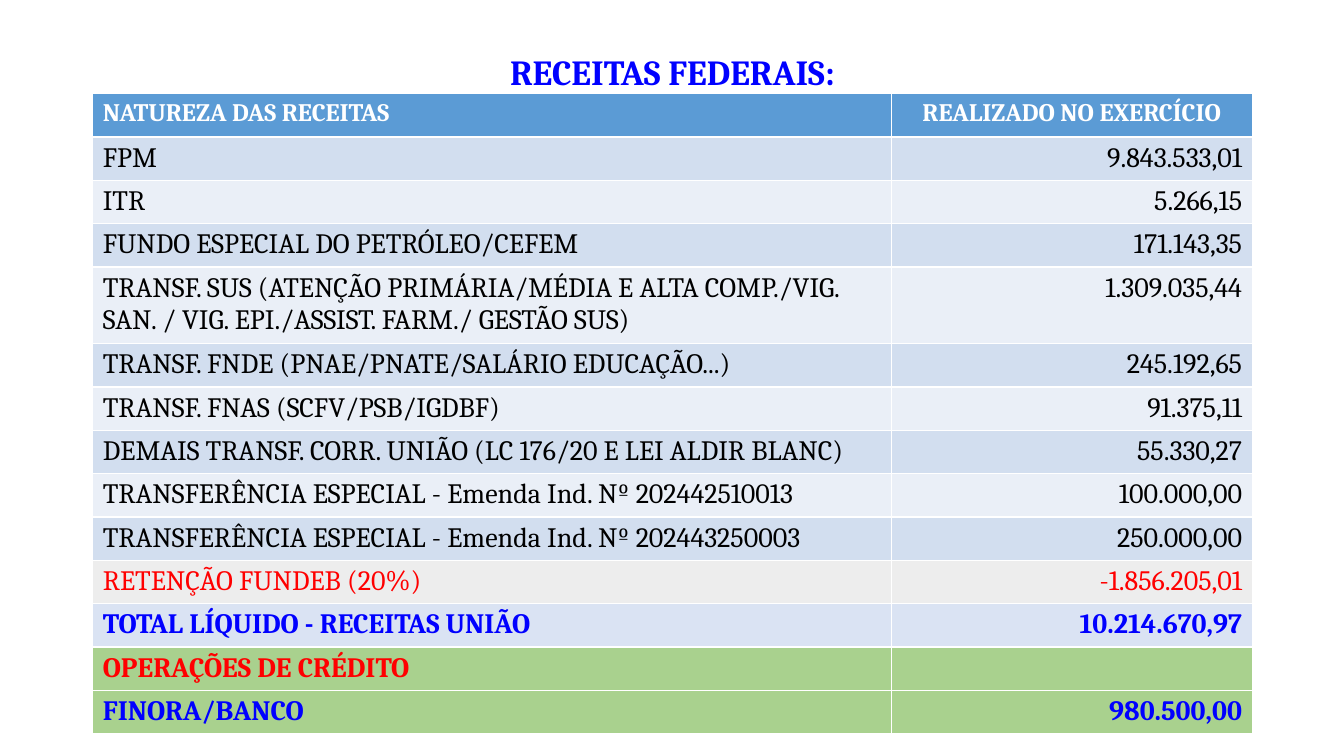
from pptx import Presentation
from pptx.dml.color import RGBColor
from pptx.enum.text import MSO_ANCHOR as Anchor, MSO_AUTO_SIZE as AutoSize, PP_ALIGN as Align
from pptx.util import Inches, Pt

FONT = "Cambria"
WHITE = RGBColor(0xFF, 0xFF, 0xFF)
BLACK = RGBColor(0x00, 0x00, 0x00)
BLUE = RGBColor(0x00, 0x00, 0xFF)
RED = RGBColor(0xFF, 0x00, 0x00)
HEADER_BLUE = RGBColor(0x5B, 0x9B, 0xD5)
BANDS = (RGBColor(0xD2, 0xDE, 0xEF), RGBColor(0xEA, 0xEF, 0xF7))
PALE_GREY = RGBColor(0xED, 0xED, 0xED)
PALE_BLUE = RGBColor(0xDA, 0xE3, 0xF3)
GREEN = RGBColor(0xA9, 0xD1, 0x8E)

LEFT, WIDTH = Inches(0.92), Inches(11.5)
COLUMN_WIDTHS = (Inches(7.92), Inches(3.58))
ROW_HEIGHT, TALL_ROW_HEIGHT = Inches(0.43), Inches(0.76)
TALL_ROW = 4

HEADER = ("NATUREZA DAS RECEITAS", "REALIZADO NO EXERCÍCIO")
REVENUES = [
    ("FPM", "9.843.533,01"),
    ("ITR", "5.266,15"),
    ("FUNDO ESPECIAL DO PETRÓLEO/CEFEM", "171.143,35"),
    ("TRANSF. SUS (ATENÇÃO PRIMÁRIA/MÉDIA E ALTA COMP./VIG. SAN. / VIG. EPI./ASSIST. FARM./ GESTÃO SUS)",
     "1.309.035,44"),
    ("TRANSF. FNDE (PNAE/PNATE/SALÁRIO EDUCAÇÃO...)", "245.192,65"),
    ("TRANSF. FNAS (SCFV/PSB/IGDBF)", "91.375,11"),
    ("DEMAIS TRANSF. CORR. UNIÃO (LC 176/20 E LEI ALDIR BLANC)", "55.330,27"),
    ("TRANSFERÊNCIA ESPECIAL - Emenda Ind. Nº 202442510013", "100.000,00"),
    ("TRANSFERÊNCIA ESPECIAL - Emenda Ind. Nº 202443250003", "250.000,00"),
]
SUMMARY = [
    (("RETENÇÃO FUNDEB (20%)", "-1.856.205,01"), PALE_GREY, RED, False),
    (("TOTAL LÍQUIDO - RECEITAS UNIÃO", "10.214.670,97"), PALE_BLUE, BLUE, True),
    (("OPERAÇÕES DE CRÉDITO", ""), GREEN, RED, True),
    (("FINORA/BANCO", "980.500,00"), GREEN, BLUE, True),
]


def set_values(target, values):
    for name, value in values.items():
        setattr(target, name, value)


def write(frame, text, size, color, bold, alignment):
    para = frame.paragraphs[0]
    para.alignment = alignment
    if text:
        span = para.add_run()
        span.text = text
        set_values(span.font, {"name": FONT, "size": Pt(size), "bold": bold})
        span.font.color.rgb = color
    return para


def add_title(page):
    title = page.shapes.title
    set_values(title, {"left": LEFT, "top": Inches(0.55), "width": WIDTH, "height": Inches(0.37)})
    set_values(title.text_frame, {"word_wrap": True, "auto_size": AutoSize.NONE,
                                  "vertical_anchor": Anchor.MIDDLE})
    para = write(title.text_frame, "RECEITAS FEDERAIS:", 25.2, BLUE, True, Align.CENTER)
    para.line_spacing = 0.9


def fill_row(row, texts, fill, color, bold, size=20, value_alignment=Align.RIGHT):
    for cell, text, alignment in zip(row.cells, texts, (Align.LEFT, value_alignment)):
        cell.fill.solid()
        cell.fill.fore_color.rgb = fill
        write(cell.text_frame, text, size, color, bold, alignment)


def add_revenue_table(page):
    row_count = 1 + len(REVENUES) + len(SUMMARY)
    height = ROW_HEIGHT * (row_count - 1) + TALL_ROW_HEIGHT
    table = page.shapes.add_table(row_count, 2, LEFT, Inches(0.93), WIDTH, height).table
    for column, width in zip(table.columns, COLUMN_WIDTHS):
        column.width = width
    rows = list(table.rows)
    for index, row in enumerate(rows):
        row.height = TALL_ROW_HEIGHT if index == TALL_ROW else ROW_HEIGHT

    fill_row(rows[0], HEADER, HEADER_BLUE, WHITE, True, 18, Align.CENTER)
    body = [(texts, BANDS[index % 2], BLACK, False) for index, texts in enumerate(REVENUES)]
    for row, content in zip(rows[1:], body + SUMMARY):
        fill_row(row, *content)


def main():
    deck = Presentation()
    set_values(deck, {"slide_width": Inches(13.33), "slide_height": Inches(7.5)})
    page = deck.slides.add_slide(deck.slide_layouts[5])
    add_title(page)
    add_revenue_table(page)
    deck.save("out.pptx")


if __name__ == "__main__":
    main()
